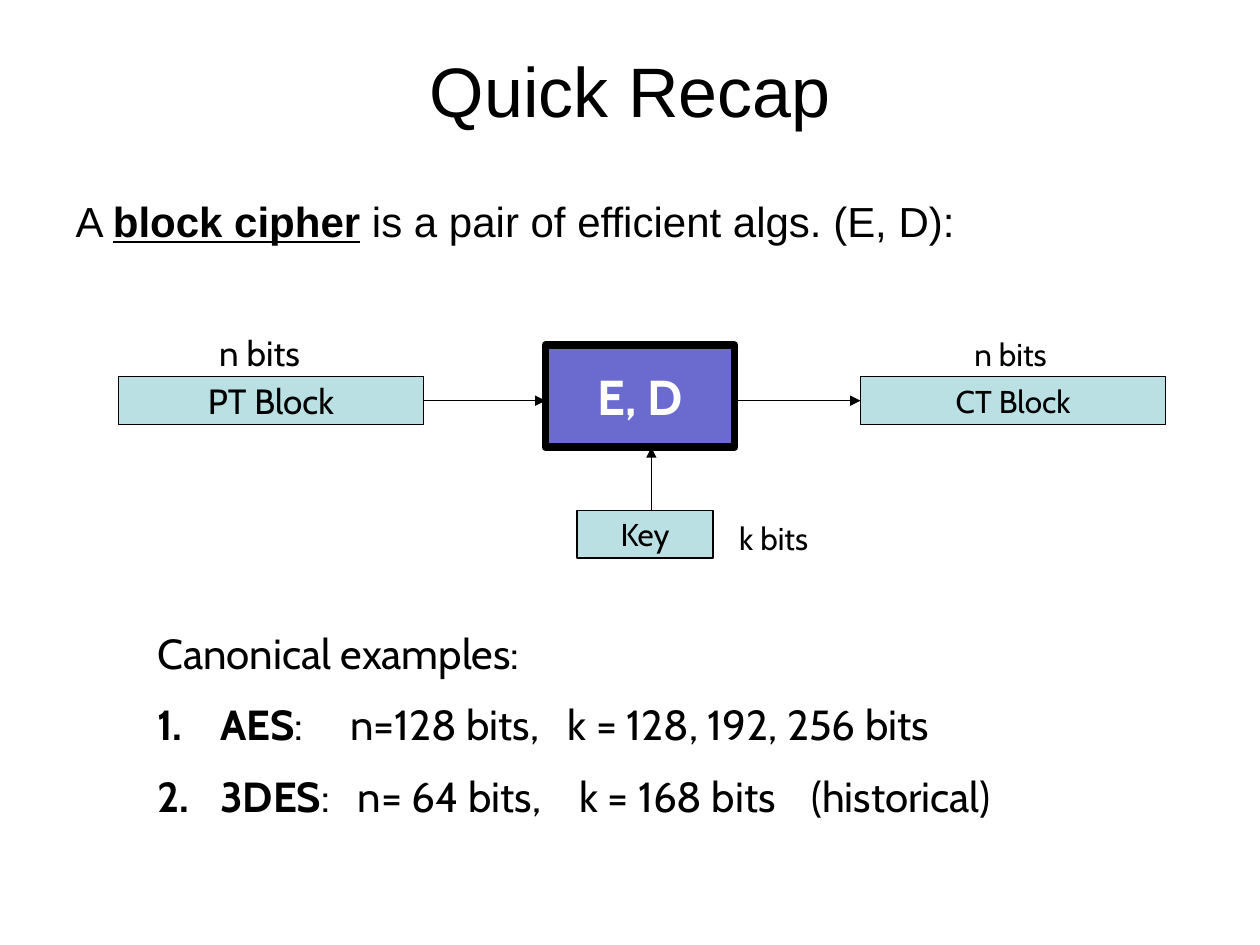
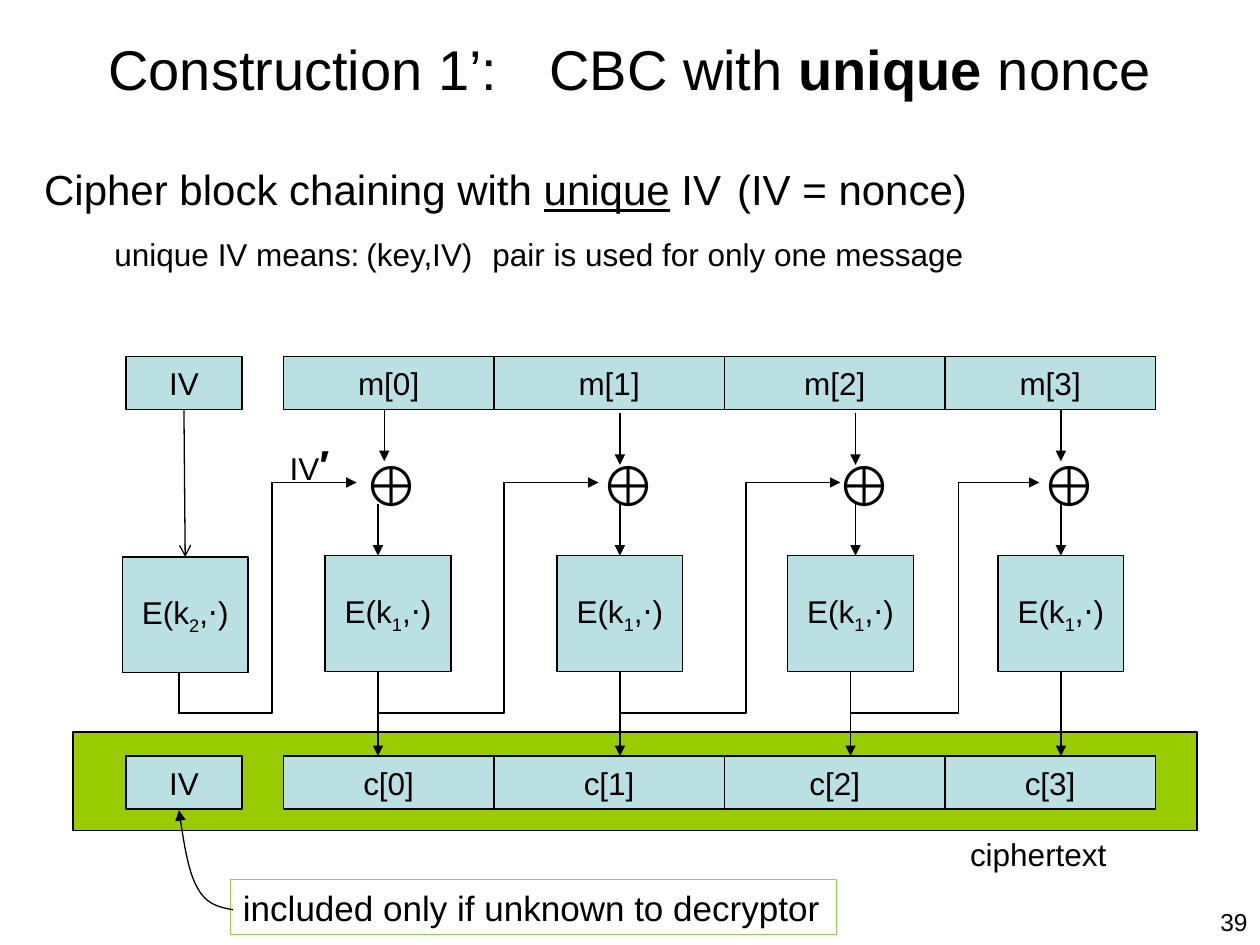
import typing

import pptx
import pptx.dml.color
import pptx.enum.shapes
import pptx.enum.text
import pptx.oxml.ns
import pptx.oxml.xmlchemy
import pptx.util
from lxml import etree

Inches = pptx.util.Inches
Pt = pptx.util.Pt
qn = pptx.oxml.ns.qn
ALIGN = pptx.enum.text.PP_ALIGN
ANCHOR = pptx.enum.text.MSO_ANCHOR

COLORS = {
    "ink": "000000",
    "paper": "FFFFFF",
    "block": "BBE0E3",
    "cipher": "6B6BCF",
    "band": "99CC00",
    "note": "92D050",
}
BLOCK_HEIGHT = 0.42
BOX_HEIGHT = 0.92


class Lane(typing.NamedTuple):
    """Horizontal positions of one message block's way through CBC."""
    left: float
    right: float
    box: float
    xor: float
    entry: float
    middle: float
    exit: float
    entry_top: float


LANES = [
    Lane(2.25, 3.92, 2.58, 2.79, 3.05, 3.0, 3.0, 3.25),
    Lane(3.92, 5.75, 4.42, 4.67, 4.92, 4.92, 4.92, 3.28),
    Lane(5.75, 7.5, 6.25, 6.54, 6.79, 6.79, 6.75, 3.28),
    Lane(7.5, 9.17, 7.92, 8.17, 8.42, 8.42, 8.42, 3.25),
]
# Start, riser and end of each path that carries a block to the next lane
FEEDBACKS = [(1.42, 2.16, 2.83), (3, 4, 4.75), (4.92, 5.92, 6.67), (6.75, 7.61, 8.25)]


def rgb(name):
    return pptx.dml.color.RGBColor.from_string(COLORS[name])


def write(paragraph, *runs, size=18, font="Arial", color="ink", align=ALIGN.LEFT,
          before=None, hanging=None, number=False, tabs=()):
    """Fill a paragraph; a run is a string or a (string, style letters or dict) pair."""
    paragraph.alignment = align
    if before is not None:
        paragraph.space_before = Pt(before)
    properties = paragraph._p.get_or_add_pPr()
    indent = Inches(hanging or 0)
    properties.set("marL", str(indent))
    properties.set("indent", str(-indent))
    if number:
        # The numbers take their font from the first run
        etree.SubElement(properties, qn("a:buFontTx"))
        etree.SubElement(properties, qn("a:buAutoNum"), type="arabicPeriod")
    else:
        etree.SubElement(properties, qn("a:buNone"))
    if tabs:
        stops = etree.SubElement(properties, qn("a:tabLst"))
        for stop in tabs:
            etree.SubElement(stops, qn("a:tab"), pos=str(Inches(stop)), algn="l")
    for item in runs:
        text, style = (item, {}) if isinstance(item, str) else item
        run = paragraph.add_run()
        run.text = text
        run.font.name = font
        run.font.size = Pt(style.get("size", size))
        run.font.bold = style.get("bold", False)
        run.font.underline = style.get("underline", False)
        run.font.color.rgb = rgb(color)
        if "baseline" in style:
            run._r.get_or_add_rPr().set("baseline", str(style["baseline"]))


def place(shape, left, top, width, height):
    shape.left, shape.top = Inches(left), Inches(top)
    shape.width, shape.height = Inches(width), Inches(height)


def add_placeholder_text(placeholder, at, *runs, **style):
    place(placeholder, *at)
    frame = placeholder.text_frame
    frame.word_wrap = True
    frame.auto_size = pptx.enum.text.MSO_AUTO_SIZE.NONE
    write(frame.paragraphs[0], *runs, **style)
    return frame


def add_label(slide, at, *runs, wrap=True, **style):
    frame = slide.shapes.add_textbox(*map(Inches, at)).text_frame
    frame.word_wrap = wrap
    write(frame.paragraphs[0], *runs, **style)
    return frame


def add_box(slide, at, *runs, fill="block", line="ink", weight=0.75, wrap=False,
            align=ALIGN.CENTER, **style):
    box = slide.shapes.add_shape(pptx.enum.shapes.MSO_SHAPE.RECTANGLE, *map(Inches, at))
    box.shadow.inherit = False
    if fill:
        box.fill.solid()
        box.fill.fore_color.rgb = rgb(fill)
    else:
        box.fill.background()
    box.line.color.rgb = rgb(line)
    box.line.width = Pt(weight)
    if runs:
        box.text_frame.word_wrap = wrap
        box.text_frame.vertical_anchor = ANCHOR.MIDDLE
        write(box.text_frame.paragraphs[0], *runs, align=align, **style)


def draw_line(shape, head):
    shape.line.color.rgb = rgb("ink")
    shape.line.width = Pt(0.75)
    properties = shape._element.spPr
    if head:
        etree.SubElement(properties.find(qn("a:ln")), qn("a:tailEnd"), type=head)
    etree.SubElement(properties, qn("a:effectLst"))


def add_arrow(slide, start, end, head="triangle"):
    draw_line(slide.shapes.add_connector(
        pptx.enum.shapes.MSO_CONNECTOR.STRAIGHT, *map(Inches, (*start, *end))), head)


def add_path(slide, points, head="triangle"):
    first, *rest = [(Inches(x), Inches(y)) for x, y in points]
    builder = slide.shapes.build_freeform(*first)
    builder.add_line_segments(rest, close=False)
    outline = builder.convert_to_shape()
    outline.fill.background()
    draw_line(outline, head)


def bezier(start, pull, push, end, steps=12):
    """Points after the start along a cubic curve."""
    points = []
    for step in range(1, steps + 1):
        t = step / steps
        weights = ((1 - t) ** 3, 3 * t * (1 - t) ** 2, 3 * t * t * (1 - t), t ** 3)
        points.append(tuple(sum(w * p[axis] for w, p in zip(weights, (start, pull, push, end)))
                            for axis in (0, 1)))
    return points


def add_cipher_box(slide, left, top, key):
    add_box(slide, (left, top, 1, BOX_HEIGHT), "E(k", (key, {"baseline": -25000}), ",⋅)")


def add_recap(slide):
    add_placeholder_text(slide.shapes.title, (0.5, 0.25, 9, 0.92), "Quick Recap",
                         size=40, align=ALIGN.CENTER)
    add_placeholder_text(slide.placeholders[1], (0.5, 1.5, 9, 5.58),
                         "A ", ("block cipher", {"bold": True, "underline": True}),
                         " is a pair of efficient algs. (E, D):", size=24)

    cabin = {"font": "Cabin", "align": ALIGN.CENTER}
    add_box(slide, (4.33, 2.74, 1.5, 0.81), ("E, D", {"bold": True}), fill="cipher",
            weight=4.5, size=28, color="paper", **cabin)
    for start, end in [((3.33, 3.18), (4.33, 3.18)), ((5.83, 3.18), (6.83, 3.18)),
                       ((5.17, 4.05), (5.17, 3.55))]:
        add_arrow(slide, start, end)
    for name, at, size in [("CT Block", (6.83, 2.99, 2.42, 0.38), 18),
                           ("PT Block", (0.94, 2.99, 2.42, 0.38), 20),
                           ("Key", (4.58, 4.05, 1.08, 0.38), 18)]:
        add_box(slide, at, name, size=size, **cabin)
    for bits, at, size in [("n bits", (7.61, 2.61, 0.82, 0.4), 18),
                           ("n bits", (1.62, 2.58, 0.88, 0.44), 20),
                           ("k bits", (5.74, 4.07, 0.8, 0.4), 18)]:
        add_label(slide, at, bits, size=size, wrap=False, **cabin)

    examples = add_label(slide, (1.15, 4.93, 7.9, 1.65), "Canonical examples:",
                         size=24, font="Cabin", hanging=0.5)
    for cipher, sizes, tabs in [
            ("AES", ":\tn=128 bits,\tk = 128, 192, 256 bits", (1.53, 3.26)),
            ("3DES", ":\tn= 64 bits,\tk = 168 bits\t(historical)", (1.59, 3.35, 5.19))]:
        write(examples.add_paragraph(), (cipher, {"bold": True}), sizes, size=24,
              font="Cabin", before=12, hanging=0.5, number=True, tabs=tabs)


def add_cbc_lanes(slide):
    for index, lane in enumerate(LANES):
        width = lane.right - lane.left
        add_box(slide, (lane.left, 2.83, width, BLOCK_HEIGHT), f"m[{index}]")
        add_box(slide, (lane.left, 6, width, BLOCK_HEIGHT), f"c[{index}]")
        add_cipher_box(slide, lane.box, 4.41, "1")
        add_label(slide, (lane.xor, 3.53, 0.54, 0.63), "⊕", size=32, wrap=False)
        add_arrow(slide, (lane.entry, lane.entry_top), (lane.entry, lane.entry_top + 0.41))
        add_arrow(slide, (lane.middle, 4), (lane.middle, 4.41))
        add_arrow(slide, (lane.exit, 5.33), (lane.exit, 6))
    for start, riser, end in FEEDBACKS:
        add_path(slide, [(start, 5.66), (riser, 5.66), (riser, 3.83), (end, 3.83)])


def add_iv_lane(slide):
    for top in (2.83, 6):
        add_box(slide, (1, top, 0.92, BLOCK_HEIGHT), "IV")
    add_cipher_box(slide, 0.97, 4.42, "2")
    add_arrow(slide, (1.46, 3.25), (1.47, 4.42), head="arrow")
    add_arrow(slide, (1.42, 5.33), (1.42, 5.67), head=None)
    add_label(slide, (2.2, 3.43, 0.52, 0.5), "IV", ("′", {"size": 23.9, "bold": True}),
              wrap=False)


def add_cbc(slide):
    add_label(slide, (7.67, 7.15, 2.33, 0.44), "39", size=14, align=ALIGN.RIGHT)
    title = add_placeholder_text(slide.shapes.title, (0.5, 0.08, 9, 0.92),
                                 "Construction 1’:\tCBC with ", ("unique", {"bold": True}),
                                 " nonce", size=32, tabs=(3.45,))
    title.margin_left = Inches(0.36)
    add_placeholder_text(slide.placeholders[1], (0.25, 1.25, 9.58, 1.33),
                         "Cipher block chaining with ", ("unique", {"underline": True}),
                         " IV\t(IV = nonce)", size=24, tabs=(6.11,))
    add_label(slide, (0.81, 1.82, 7.21, 0.4),
              "unique IV means:\t(key,IV)\tpair is used for only one message",
              tabs=(2.22, 3.2))

    add_box(slide, (0.58, 5.81, 8.92, 0.78), fill="band")
    add_cbc_lanes(slide)
    add_iv_lane(slide)
    add_label(slide, (7.6, 6.58, 1.65, 0.5), "ciphertext")

    add_box(slide, (1.83, 6.98, 4.81, 0.44), "included only if unknown to decryptor",
            fill=None, line="note", size=20, wrap=True, align=ALIGN.LEFT)
    tail, bend, tip = (1.85, 7.22), (1.57, 7.05), (1.42, 6.43)
    add_path(slide, [tail, *bezier(tail, (1.74, 7.2), (1.64, 7.18), bend),
                     *bezier(bend, (1.49, 6.92), (1.46, 6.68), tip)])


def main():
    deck = pptx.Presentation()
    deck.slide_width, deck.slide_height = Inches(10), Inches(7.5)
    for build in (add_recap, add_cbc):
        build(deck.slides.add_slide(deck.slide_layouts[1]))
    deck.save("out.pptx")


if __name__ == "__main__":
    main()
